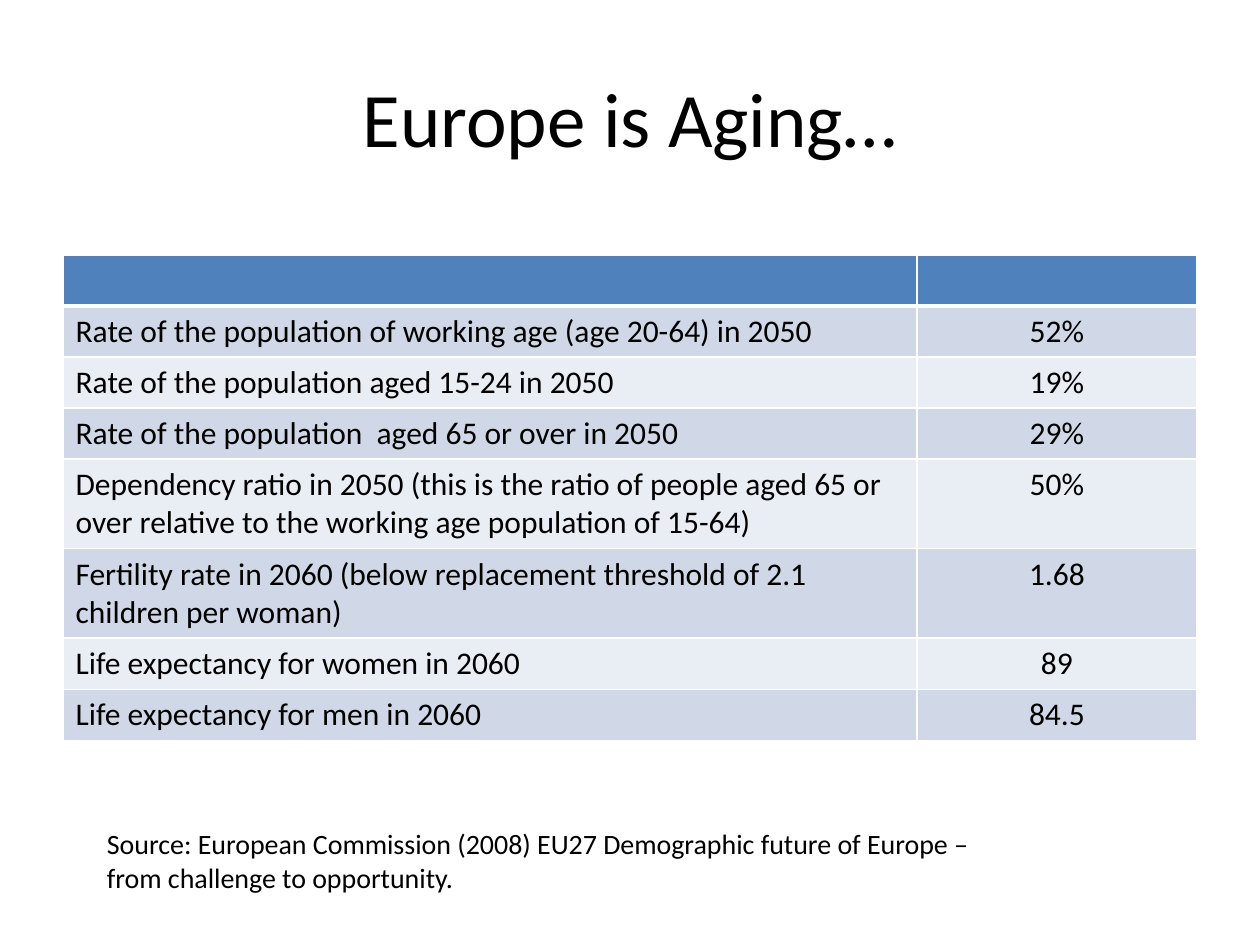
from dataclasses import dataclass

from lxml import etree
from pptx import Presentation
from pptx.dml.color import RGBColor
from pptx.enum import text
from pptx.oxml import ns
from pptx.util import Pt


@dataclass(frozen=True)
class Theme:
    font: str = "Calibri"
    ink: str = "000000"
    rule: str = "FFFFFF"
    header: str = "4F81BD"
    bands: tuple = ("D0D8E8", "E9EDF4")
    title_size: int = 44
    table_size: int = 18
    source_size: int = 16


theme = Theme()


def write(frame, words, size, align):
    paragraph = frame.paragraphs[0]
    paragraph.alignment = align
    run = paragraph.add_run()
    run.text = words
    run.font.name = theme.font
    run.font.size = Pt(size)
    run.font.color.rgb = RGBColor.from_string(theme.ink)


def set_borders(cell, **widths):
    """Draw the cell's L, R, T and B edges, each with a width in points."""
    properties = cell._tc.get_or_add_tcPr()
    for side, width in widths.items():
        line = etree.SubElement(properties, ns.qn(f"a:ln{side}"), w=str(Pt(width)))
        fill = etree.SubElement(line, ns.qn("a:solidFill"))
        etree.SubElement(fill, ns.qn("a:srgbClr"), val=theme.rule)


LEFT, CENTER = text.PP_ALIGN.LEFT, text.PP_ALIGN.CENTER

presentation = Presentation()
presentation.slide_width, presentation.slide_height = Pt(720), Pt(540)
slide = presentation.slides.add_slide(presentation.slide_layouts[5])

title = slide.shapes.title
title.left, title.top, title.width, title.height = Pt(36), Pt(21.6), Pt(648), Pt(90)
title.text_frame.vertical_anchor = text.MSO_ANCHOR.MIDDLE
write(title.text_frame, "Europe is Aging…", theme.title_size, CENTER)

indicators = [
    ("", ""),
    ("Rate of the population of working age (age 20-64) in 2050", "52%"),
    ("Rate of the population aged 15-24 in 2050", "19%"),
    ("Rate of the population  aged 65 or over in 2050", "29%"),
    ("Dependency ratio in 2050 (this is the ratio of people aged 65 or over "
     "relative to the working age population of 15-64)", "50%"),
    ("Fertility rate in 2060 (below replacement threshold of 2.1 "
     "children per woman)", "1.68"),
    ("Life expectancy for women in 2060", "89"),
    ("Life expectancy for men in 2060", "84.5"),
]
row_height = 29.2
table = slide.shapes.add_table(
    len(indicators), 2, Pt(36), Pt(145.6), Pt(648), Pt(row_height * len(indicators))
).table
for column, width in zip(table.columns, (488, 160)):
    column.width = Pt(width)

for row, indicator in enumerate(indicators):
    table.rows[row].height = Pt(row_height)
    color = theme.bands[(row - 1) % 2] if row else theme.header
    for column, (words, align) in enumerate(zip(indicator, (LEFT, CENTER))):
        cell = table.cell(row, column)
        set_borders(cell, L=1, R=1, T=3 if row == 1 else 1, B=1 if row else 3)
        cell.fill.solid()
        cell.fill.fore_color.rgb = RGBColor.from_string(color)
        if words:
            write(cell.text_frame, words, theme.table_size, align)

source = slide.shapes.add_textbox(Pt(54), Pt(468.7), Pt(538.6), Pt(46)).text_frame
source.word_wrap = True
source.auto_size = text.MSO_AUTO_SIZE.SHAPE_TO_FIT_TEXT
write(
    source,
    "Source: European Commission (2008) EU27 Demographic future of Europe – "
    "from challenge to opportunity.",
    theme.source_size,
    LEFT,
)

presentation.save("out.pptx")
